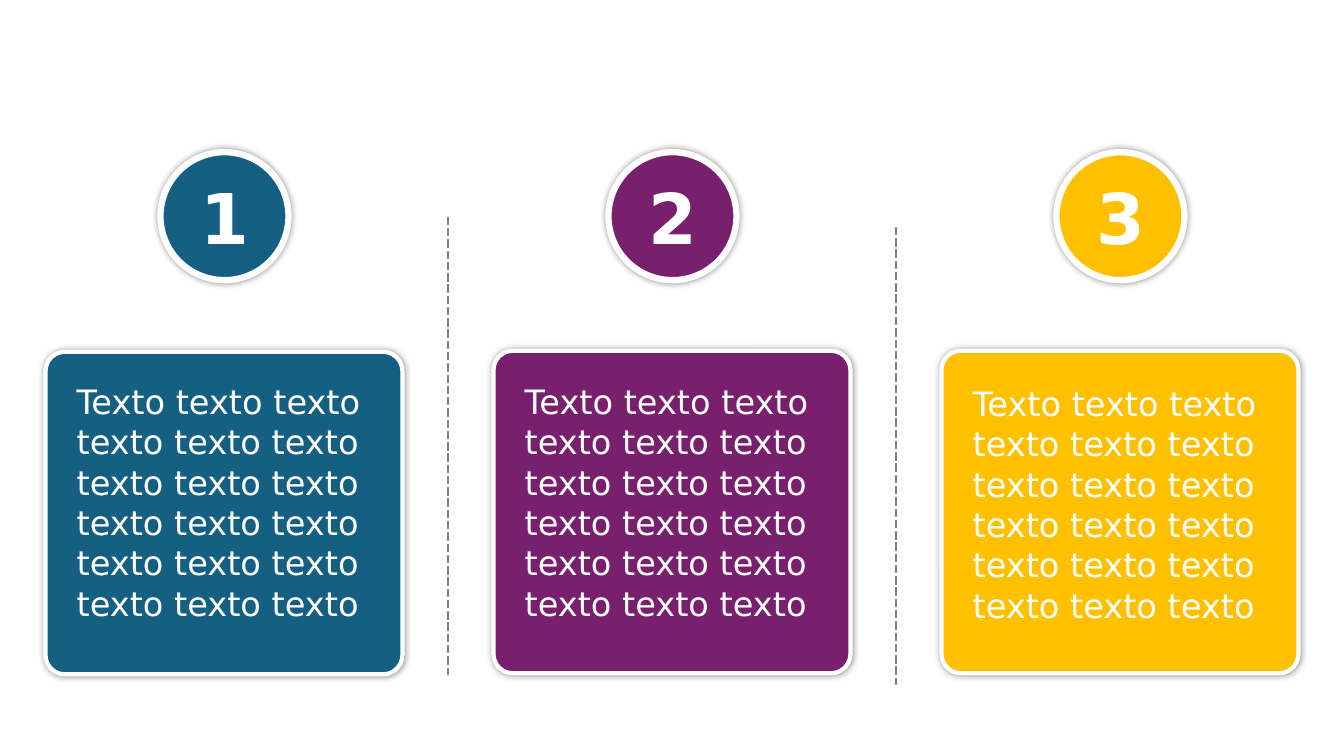
from dataclasses import dataclass

from lxml.etree import SubElement
from pptx import Presentation
from pptx.dml.color import RGBColor
from pptx.enum.dml import MSO_LINE
from pptx.enum.shapes import MSO_CONNECTOR, MSO_SHAPE
from pptx.enum.text import MSO_AUTO_SIZE, PP_ALIGN
from pptx.oxml.ns import qn
from pptx.util import Inches, Pt

SLIDE_WIDTH, SLIDE_HEIGHT = 13.33, 7.5


@dataclass(frozen=True)
class Theme:
    font: str = "DejaVu Sans"
    columns: tuple = ("156082", "78206E", "FFC000")
    light: str = "FFFFFF"
    divider: str = "808080"
    shadow: str = "000000"
    number_size: float = 50
    body_size: float = 24


class SlideBuilder:
    def __init__(self, slide, theme):
        self.shapes = slide.shapes
        self.theme = theme

    def panel(self, kind, left, top, width, height, color, border):
        """Filled shape with a light border and a soft shadow."""
        panel = self.shapes.add_shape(
            kind, Inches(left), Inches(top), Inches(width), Inches(height))
        panel.fill.solid()
        panel.fill.fore_color.rgb = RGBColor.from_string(color)
        panel.line.color.rgb = RGBColor.from_string(self.theme.light)
        panel.line.width = Pt(border)
        panel.shadow.inherit = False
        effects = panel._element.spPr.find(qn("a:effectLst"))
        glow = SubElement(effects, qn("a:outerShdw"), blurRad=str(Pt(5)),
                          dist="0", dir="0", algn="ctr", rotWithShape="0")
        tint = SubElement(glow, qn("a:srgbClr"), val=self.theme.shadow)
        SubElement(tint, qn("a:alpha"), val="40000")
        return panel

    def divider(self, x, top, bottom):
        divider = self.shapes.add_connector(
            MSO_CONNECTOR.STRAIGHT,
            Inches(x), Inches(top), Inches(x), Inches(bottom))
        divider.line.color.rgb = RGBColor.from_string(self.theme.divider)
        divider.line.width = Pt(2)
        divider.line.dash_style = MSO_LINE.SQUARE_DOT
        # The preset "sysDash" has the short, tight dashes
        divider.line._ln.find(qn("a:prstDash")).set("val", "sysDash")
        SubElement(divider._element.spPr, qn("a:effectLst"))

    def text(self, words, left, top, width, height, size,
             align=PP_ALIGN.LEFT, bold=False):
        box = self.shapes.add_textbox(
            Inches(left), Inches(top), Inches(width), Inches(height))
        frame = box.text_frame
        frame.word_wrap = True
        frame.auto_size = MSO_AUTO_SIZE.SHAPE_TO_FIT_TEXT
        paragraph = frame.paragraphs[0]
        paragraph.alignment = align
        run = paragraph.add_run()
        run.text = words
        run.font.name = self.theme.font
        run.font.size = Pt(size)
        run.font.bold = bold
        run.font.color.rgb = RGBColor.from_string(self.theme.light)


def main():
    deck = Presentation()
    deck.slide_width = Inches(SLIDE_WIDTH)
    deck.slide_height = Inches(SLIDE_HEIGHT)
    theme = Theme()
    builder = SlideBuilder(deck.slides.add_slide(deck.slide_layouts[6]), theme)

    column_width = SLIDE_WIDTH / len(theme.columns)
    body = "Texto " + " ".join(["texto"] * 17)
    card_tops = (3.49, 3.48, 3.48)
    body_tops = (3.73, 3.73, 3.75)

    # Dashed dividers between the columns
    for boundary, divider_top in enumerate((2.15, 2.25), start=1):
        builder.divider(boundary * column_width, divider_top, divider_top + 4.55)

    # Columns: card, numbered circle, body text
    for index, color in enumerate(theme.columns):
        center = (index + 0.5) * column_width
        card = builder.panel(MSO_SHAPE.ROUNDED_RECTANGLE, center - 1.77,
                             card_tops[index], 3.54, 3.2, color, border=3)
        card.adjustments[0] = 0.06
        builder.panel(MSO_SHAPE.OVAL, center - 0.63, 1.51, 1.27, 1.27,
                      color, border=4.5)
        builder.text(body, center - 1.56, body_tops[index], 3.34, 2.52,
                     theme.body_size)
        builder.text(str(index + 1), center - 0.44, 1.68, 0.89, 0.94,
                     theme.number_size, PP_ALIGN.CENTER, bold=True)

    deck.save("out.pptx")


if __name__ == "__main__":
    main()
